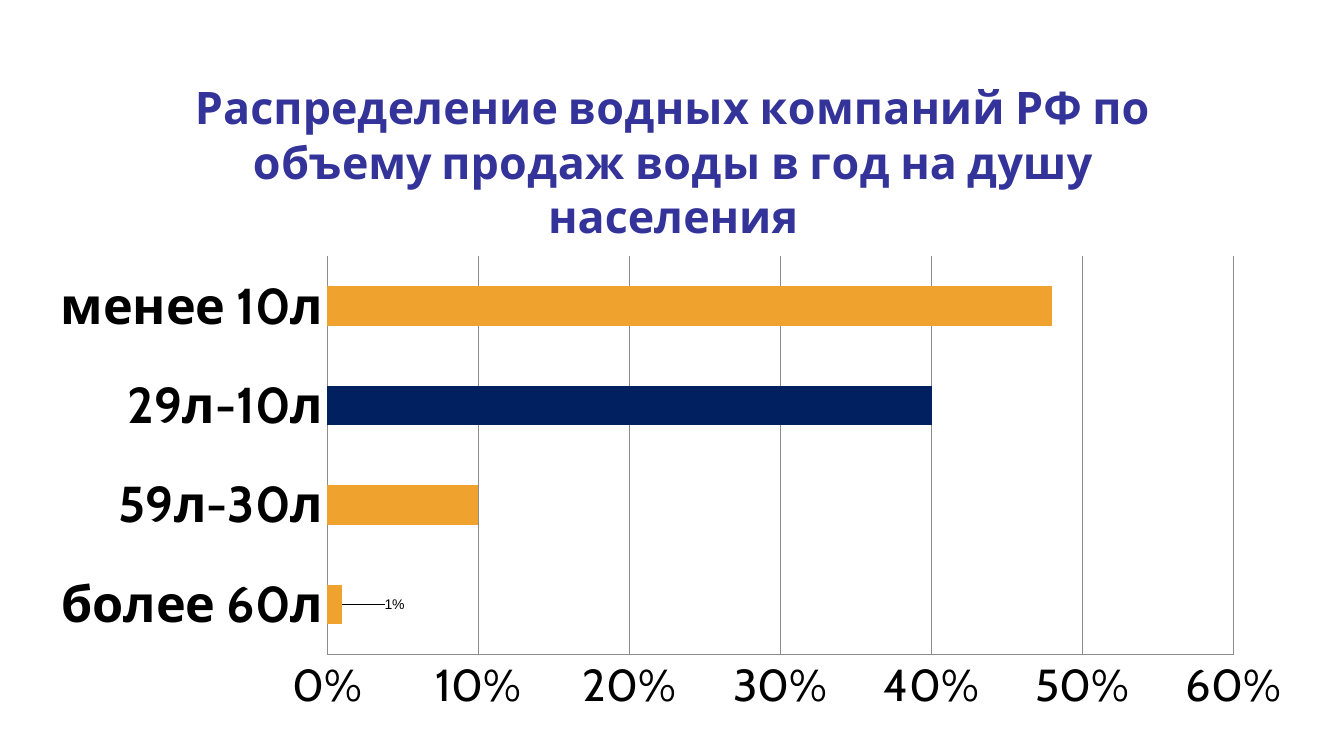
from lxml import etree
from pptx import Presentation
from pptx.chart.data import CategoryChartData as Data
from pptx.dml.color import RGBColor
from pptx.enum.chart import XL_CHART_TYPE as Kind, XL_LABEL_POSITION as Spot
from pptx.enum.chart import XL_TICK_MARK as Tick
from pptx.oxml.ns import qn
from pptx.util import Inches, Pt


def rgb(code):
    return RGBColor.from_string(code)


def style(font, size, color="000000", bold=False, face="Cabin"):
    font.name, font.size, font.bold = face, Pt(size), bold
    font.color.rgb = rgb(color)


def write(frame, text, **form):
    frame.text = text
    style(frame.paragraphs[0].runs[0].font, **form)


def place(node, index, **parts):
    """Set a manual layout, in shares of the chart's size."""
    for old in node.findall(qn("c:layout")):
        node.remove(old)
    layout = etree.Element(qn("c:layout"))
    manual = etree.SubElement(layout, qn("c:manualLayout"))
    for tag, value in parts.items():
        etree.SubElement(manual, qn("c:" + tag)).set("val", str(value))
    node.insert(index, layout)


class Deck:
    wide, high = 13.33, 7.5
    gold, navy, title, grid = "F0A22E", "002060", "333399", "8C8C8C"

    def __init__(self):
        self.file = Presentation()
        self.file.slide_width = Inches(self.wide)
        self.file.slide_height = Inches(self.high)
        self.slide = self.file.slides.add_slide(self.file.slide_layouts[6])

    def chart(self, left, top, width, height, rows):
        data = Data(number_format="0%")
        data.categories = list(rows)
        data.add_series("Series 1", list(rows.values()))
        frame = self.slide.shapes.add_chart(
            Kind.BAR_CLUSTERED,
            Inches(left * self.wide), Inches(top * self.high),
            Inches(width * self.wide), Inches(height * self.high), data)
        chart = frame.chart
        chart.has_legend = False
        style(chart.font, 18)
        area = chart.plots[0]._element.getparent()
        place(area, 0, layoutTarget="inner", xMode="edge", yMode="edge",
              x=0.23, y=0.32, w=0.71, h=0.57)
        return chart

    def head(self, chart, text):
        chart.has_title = True
        write(chart.chart_title.text_frame, text, size=32, color=self.title, bold=True)
        place(chart.chart_title._element, 1, xMode="edge", yMode="edge", x=0.12, y=0.05)

    def axis(self, axis, size, bold=False):
        axis.major_tick_mark = axis.minor_tick_mark = Tick.NONE
        style(axis.tick_labels.font, size, bold=bold)
        self.line(axis.format.line)

    def line(self, line):
        line.color.rgb = rgb(self.grid)
        line.width = Pt(0.75)

    def bars(self, plot, accent):
        plot.gap_width = 150
        plot.vary_by_categories = False
        bars = plot.series[0]
        for fill, color in ((bars.format.fill, self.gold),
                            (bars.points[accent].format.fill, self.navy)):
            fill.solid()
            fill.fore_color.rgb = rgb(color)
        return bars

    def label(self, bars, index):
        label = bars.points[index].data_label
        style(label.font, 10, face="Arial")
        label.position = Spot.OUTSIDE_END
        bars.data_labels.show_value = False
        place(bars._element.find(".//" + qn("c:dLbl")), 1, x=0.03, y=0)


def main():
    deck = Deck()

    # Chart and title
    chart = deck.chart(0.025, 0.044, 0.95, 0.923, {
        "более 60л": 0.01, "59л-30л": 0.1, "29л-10л": 0.4, "менее 10л": 0.48})
    deck.head(chart, "Распределение водных компаний РФ по объему "
                     "продаж воды в год на душу населения")

    # Axes
    deck.axis(chart.category_axis, 36, bold=True)
    scale = chart.value_axis
    deck.axis(scale, 32)
    scale.minimum_scale, scale.maximum_scale, scale.major_unit = 0, 0.6, 0.1
    scale.tick_labels.number_format = "0%"
    scale.tick_labels.number_format_is_linked = False
    scale.has_major_gridlines = True
    deck.line(scale.major_gridlines.format.line)

    # Bars and the single value label
    bars = deck.bars(chart.plots[0], accent=2)
    deck.label(bars, 0)

    deck.file.save("out.pptx")


if __name__ == "__main__":
    main()
